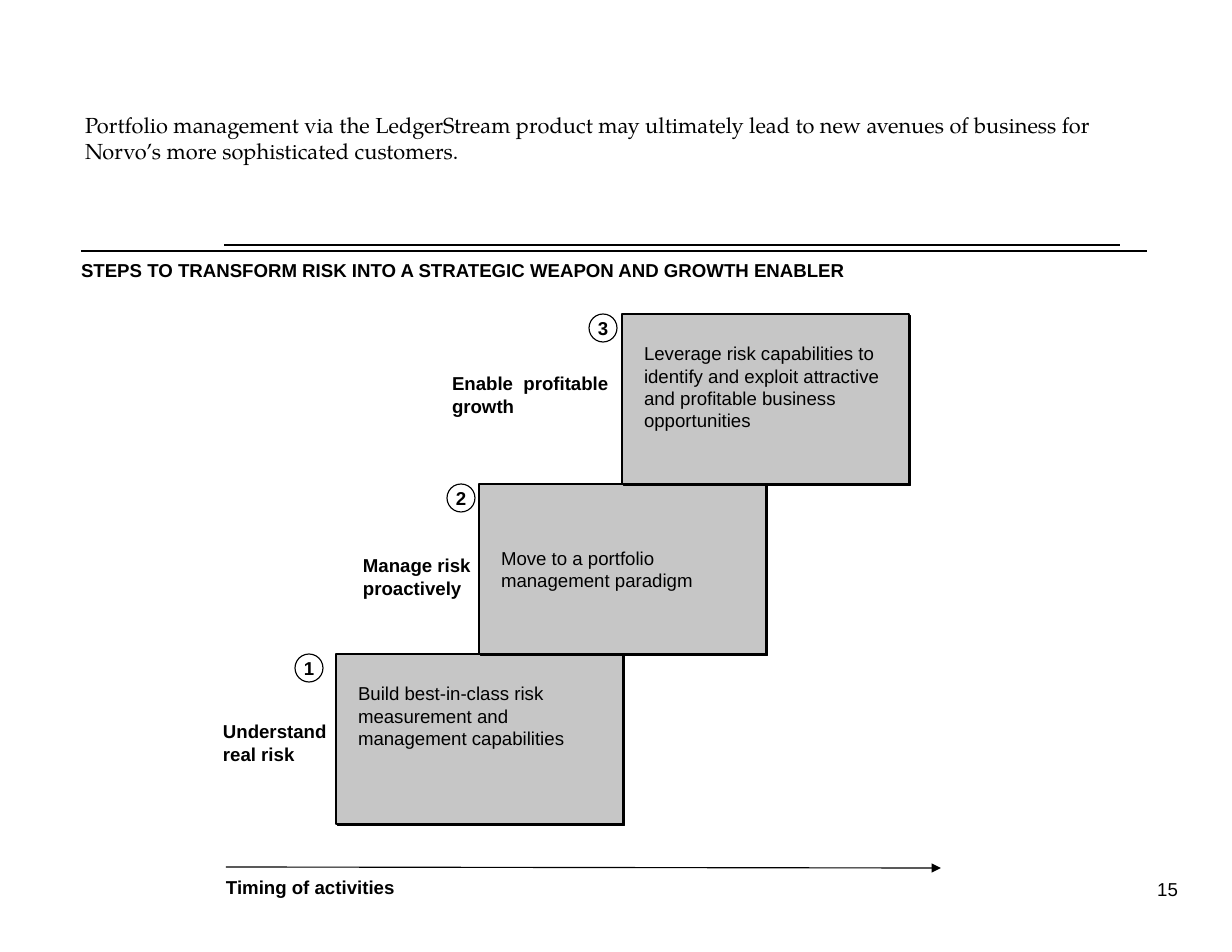
"""Build the slide with the three-step risk staircase."""
from lxml import etree
from pptx import Presentation
from pptx.dml.color import RGBColor
from pptx.enum.shapes import MSO_CONNECTOR as LINE, MSO_SHAPE as SHAPE
from pptx.enum.text import MSO_ANCHOR as ANCHOR, MSO_AUTO_SIZE as FIT, PP_ALIGN as ALIGN
from pptx.oxml import parse_xml
from pptx.oxml.ns import nsdecls, qn
from pptx.util import Emu, Pt

BLACK = RGBColor(0x00, 0x00, 0x00)
WHITE = RGBColor(0xFF, 0xFF, 0xFF)
GREY = RGBColor(0xC6, 0xC6, 0xC6)
SANS = "Arial"
SERIF = "TeX Gyre Pagella"
BOX_W, BOX_H = 287, 170
STEP_X, STEP_Y = 143, 170
FIRST_X, FIRST_Y = 336, 654
CIRCLE = 28
STEPS = [
    ("Build best-in-class risk measurement and management capabilities",
     ANCHOR.TOP, 295, ["Understand real risk"], (223, 720, 112, 45)),
    ("Move to a portfolio management paradigm",
     ANCHOR.MIDDLE, 447, ["Manage risk", "proactively"], (363, 554, 115, 45)),
    ("Leverage risk capabilities to identify and exploit attractive "
     "and profitable business opportunities",
     ANCHOR.TOP, 589, ["Enable  profitable growth"], (452, 372, 164, 45)),
]


def px(n):
    """Turn px at 112 to the inch into EMU."""
    return Emu(round(n * 914400 / 112))


def write(sp, lines, size=12, bold=False, font=SANS, align=ALIGN.LEFT,
          anchor=ANCHOR.TOP, insets=(0, 0, 0, 0), wrap=True):
    """Fill a shape with one paragraph per line."""
    tf = sp.text_frame
    tf.auto_size = FIT.NONE
    tf.word_wrap = wrap
    tf.vertical_anchor = anchor
    tf.margin_left, tf.margin_top, tf.margin_right, tf.margin_bottom = map(px, insets)
    for i, line in enumerate(lines):
        p = tf.add_paragraph() if i else tf.paragraphs[0]
        p.alignment = align
        r = p.add_run()
        r.text = line
        r.font.name = font
        r.font.size = Pt(size)
        r.font.bold = bold
        r.font.color.rgb = BLACK


def add_text(s, at, lines, **style):
    """Add a text box."""
    write(s.shapes.add_textbox(*map(px, at)), lines, **style)


def add_title(s, at, text):
    """Move and fill the title placeholder."""
    sp = s.shapes.title
    sp.left, sp.top, sp.width, sp.height = map(px, at)
    write(sp, [text], bold=True)


def add_shape(s, kind, at, fill):
    """Add a filled shape with a thin black outline."""
    sp = s.shapes.add_shape(kind, *map(px, at))
    sp.shadow.inherit = False
    sp.fill.solid()
    sp.fill.fore_color.rgb = fill
    sp.line.color.rgb = BLACK
    sp.line.width = Pt(0.75)
    return sp


def add_hard_shadow(sp):
    """Give a shape a solid black shadow at its lower right."""
    effects = sp.element.spPr.find(qn("a:effectLst"))
    effects.append(parse_xml(
        f'<a:outerShdw {nsdecls("a")} dist="{Pt(1.4)}" dir="2700000" algn="ctr" '
        f'rotWithShape="0"><a:srgbClr val="{BLACK}"/></a:outerShdw>'))


def add_line(s, start, end, arrow=False):
    """Add a thin black line, with an arrowhead if asked."""
    c = s.shapes.add_connector(LINE.STRAIGHT, *map(px, start + end))
    c.line.color.rgb = BLACK
    c.line.width = Pt(0.75)
    if arrow:
        etree.SubElement(c.line._get_or_add_ln(), qn("a:tailEnd"), type="triangle")
    etree.SubElement(c.element.spPr, qn("a:effectLst"))


def add_step(s, i, text, anchor, circle_x, label, label_at):
    """Add one stair with its box, number and label."""
    x, y = FIRST_X + i * STEP_X, FIRST_Y - i * STEP_Y
    box = add_shape(s, SHAPE.RECTANGLE, (x, y, BOX_W, BOX_H), GREY)
    add_hard_shadow(box)
    top = 28 if anchor == ANCHOR.TOP else 6
    write(box, [text], anchor=anchor, insets=(22, top, 22, 6))
    circle = add_shape(s, SHAPE.OVAL, (circle_x, y, CIRCLE, CIRCLE), WHITE)
    write(circle, [str(i + 1)], bold=True, align=ALIGN.CENTER,
          anchor=ANCHOR.MIDDLE, wrap=False)
    add_text(s, label_at, label, bold=True)


def main():
    """Build and save the slide."""
    prs = Presentation()
    prs.slide_width, prs.slide_height = px(1232), px(952)
    s = prs.slides.add_slide(prs.slide_layouts[5])
    add_title(s, (81, 259, 926, 30),
              "STEPS TO TRANSFORM RISK INTO A STRATEGIC WEAPON AND GROWTH ENABLER")
    add_text(s, (85, 112, 1066, 53),
             ["Portfolio management via the LedgerStream product may ultimately lead to "
              "new avenues of business for Norvo’s more sophisticated customers."],
             size=14, font=SERIF)
    add_line(s, (224, 245), (1120, 245))
    add_line(s, (81, 251), (1147, 251))
    for i, step in enumerate(STEPS):
        add_step(s, i, *step)
    add_line(s, (226, 867), (941, 868), arrow=True)
    add_text(s, (226, 876, 208, 22), ["Timing of activities"], bold=True)
    add_text(s, (922, 878, 256, 22), ["15"], align=ALIGN.RIGHT)
    prs.save("out.pptx")


if __name__ == "__main__":
    main()
